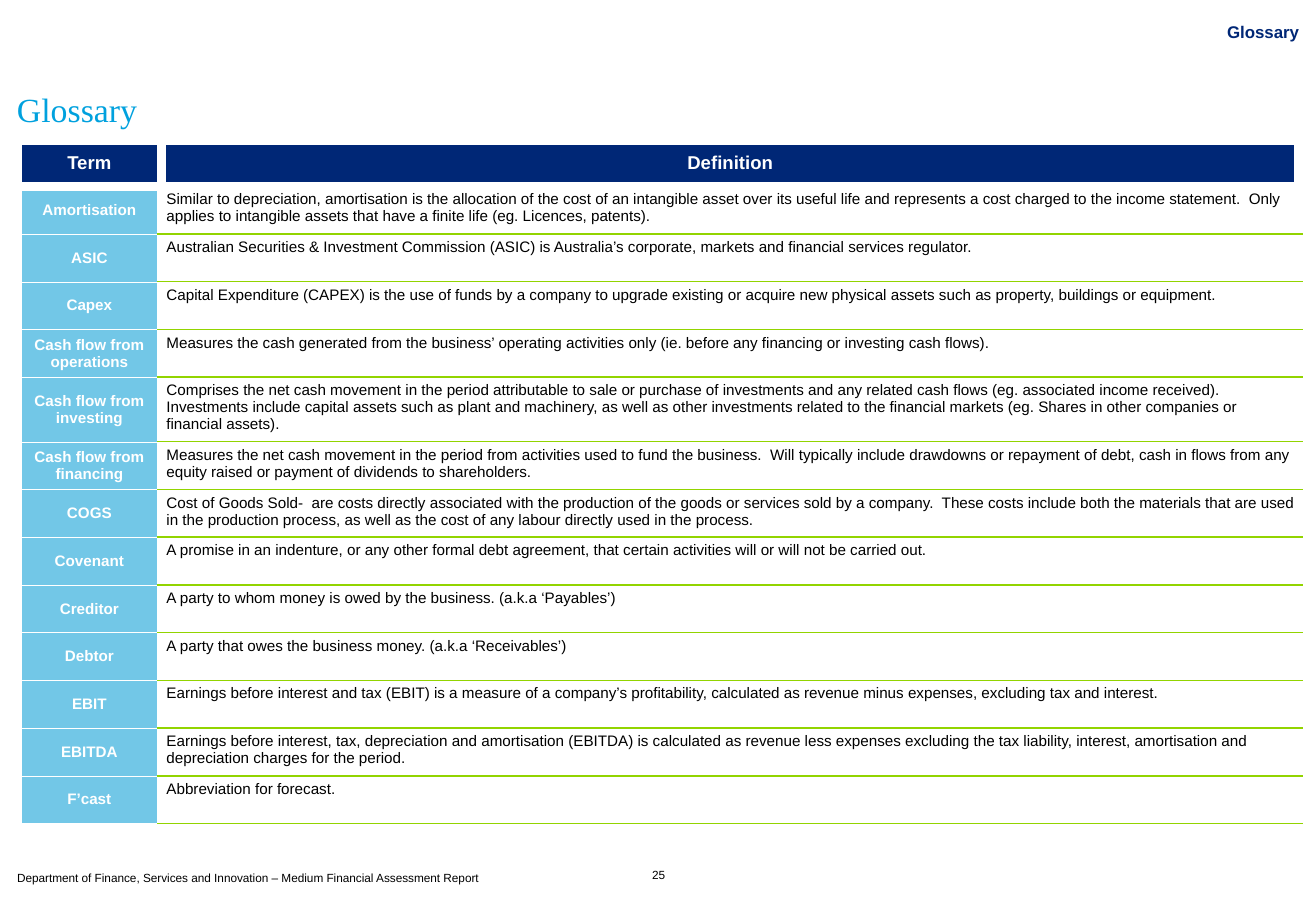
"""Build the glossary slide: headings, a two-column table of terms and a footer."""
from lxml.etree import SubElement
from pptx import Presentation
from pptx.dml.color import RGBColor
from pptx.enum.text import MSO_ANCHOR as Anchor, PP_ALIGN as Align
from pptx.oxml.ns import qn
from pptx.util import Inches, Pt

COLOURS = {"navy": "002776", "cyan": "00A1DE", "sky": "72C7E7",
           "green": "92D400", "white": "FFFFFF", "black": "000000"}

GLOSSARY = [
    ("Amortisation", "Similar to depreciation, amortisation is the allocation of the cost of an intangible asset over its useful life and represents a cost charged to the income statement.  Only applies to intangible assets that have a finite life (eg. Licences, patents)."),
    ("ASIC", "Australian Securities & Investment Commission (ASIC) is Australia’s corporate, markets and financial services regulator."),
    ("Capex", "Capital Expenditure (CAPEX) is the use of funds by a company to upgrade existing or acquire new physical assets such as property, buildings or equipment."),
    ("Cash flow from operations", "Measures the cash generated from the business’ operating activities only (ie. before any financing or investing cash flows)."),
    ("Cash flow from investing", "Comprises the net cash movement in the period attributable to sale or purchase of investments and any related cash flows (eg. associated income received).  Investments include capital assets such as plant and machinery, as well as other investments related to the financial markets (eg. Shares in other companies or financial assets)."),
    ("Cash flow from financing", "Measures the net cash movement in the period from activities used to fund the business.  Will typically include drawdowns or repayment of debt, cash in flows from any equity raised or payment of dividends to shareholders."),
    ("COGS", "Cost of Goods Sold-  are costs directly associated with the production of the goods or services sold by a company.  These costs include both the materials that are used in the production process, as well as the cost of any labour directly used in the process."),
    ("Covenant", "A promise in an indenture, or any other formal debt agreement, that certain activities will or will not be carried out."),
    ("Creditor", "A party to whom money is owed by the business. (a.k.a ‘Payables’)"),
    ("Debtor", "A party that owes the business money. (a.k.a ‘Receivables’)"),
    ("EBIT", "Earnings before interest and tax (EBIT) is a measure of a company’s profitability, calculated as revenue minus expenses, excluding tax and interest."),
    ("EBITDA", "Earnings before interest, tax, depreciation and amortisation (EBITDA) is calculated as revenue less expenses excluding the tax liability, interest, amortisation and depreciation charges for the period."),
    ("F’cast", "Abbreviation for forecast."),
]


def write(frame, text, size, colour, align=Align.LEFT, bold=False, font="Arial"):
    """Fill a text frame with one formatted paragraph."""
    frame.text = text
    para = frame.paragraphs[0]
    para.alignment = align
    span = para.runs[0].font
    span.name, span.size, span.bold = font, Pt(size), bold
    span.color.rgb = RGBColor.from_string(COLOURS[colour])


def style_cell(cell, fill, margins, borders):
    """Set the borders, fill and margins (left, top, right, bottom) of a cell."""
    properties = cell._tc.get_or_add_tcPr()
    for side, (colour, width) in zip("LRTB", borders):
        line = SubElement(properties, qn(f"a:ln{side}"), w=str(Pt(width)))
        solid = SubElement(line, qn("a:solidFill"))
        SubElement(solid, qn("a:srgbClr"), val=COLOURS[colour])
    cell.fill.solid()
    cell.fill.fore_color.rgb = RGBColor.from_string(COLOURS[fill])
    (cell.margin_left, cell.margin_top,
     cell.margin_right, cell.margin_bottom) = map(Inches, margins)


deck = Presentation()
deck.slide_width, deck.slide_height = Inches(10.83), Inches(7.5)
page = deck.slides.add_slide(deck.slide_layouts[6])

labels = [
    ("Department of Finance, Services and Innovation – Medium Financial Assessment Report",
     (0.14, 7.13, 10.55, 0.2), Anchor.MIDDLE, (7, "black")),
    ("Glossary", (6.62, 0.18, 4.07, 0.17), Anchor.TOP, (10, "navy", Align.RIGHT, True)),
    ("25", (5.27, 7.14, 0.3, 0.12), Anchor.BOTTOM, (7, "black", Align.CENTER)),
    ("Glossary", (0.14, 0.34, 10.56, 1.12), Anchor.MIDDLE,
     (20, "cyan", Align.LEFT, False, "Times New Roman")),
]
for text, place, anchor, style in labels:
    box = page.shapes.add_textbox(*map(Inches, place))
    frame = box.text_frame
    frame.word_wrap = True
    frame.vertical_anchor = anchor
    frame.margin_left = frame.margin_top = frame.margin_right = frame.margin_bottom = 0
    write(frame, text, *style)

HEADER_HEIGHT, TABLE_HEIGHT = 0.33, 5.44
table = page.shapes.add_table(len(GLOSSARY) + 1, 2, Inches(0.14), Inches(1.19),
                              Inches(10.55), Inches(TABLE_HEIGHT)).table
table.first_row = table.horz_banding = False
table.columns[0].width, table.columns[1].width = Inches(1.19), Inches(9.36)
for row in table.rows:
    row.height = Inches((TABLE_HEIGHT - HEADER_HEIGHT) / len(GLOSSARY))
table.rows[0].height = Inches(HEADER_HEIGHT)

gap, hairline, rule = ("white", 6), ("white", 0.25), ("green", 1)
for column, heading in enumerate(("Term", "Definition")):
    cell = table.cell(0, column)
    style_cell(cell, "navy", (0.1, 0.06, 0.1, 0.1), (gap, gap, hairline, gap))
    cell.vertical_anchor = Anchor.MIDDLE
    write(cell.text_frame, heading, 11, "white", Align.CENTER, True)

for number, (term, definition) in enumerate(GLOSSARY, start=1):
    term_cell, definition_cell = table.cell(number, 0), table.cell(number, 1)
    for cell, fill, divider in ((term_cell, "sky", hairline),
                                (definition_cell, "white", rule)):
        top = gap if number == 1 else divider
        style_cell(cell, fill, (0.04,) * 4, (gap, gap, top, divider))
    term_cell.vertical_anchor = Anchor.MIDDLE
    write(term_cell.text_frame, term, 9, "white", Align.CENTER, True)
    write(definition_cell.text_frame, definition, 9, "black")

deck.save("out.pptx")
